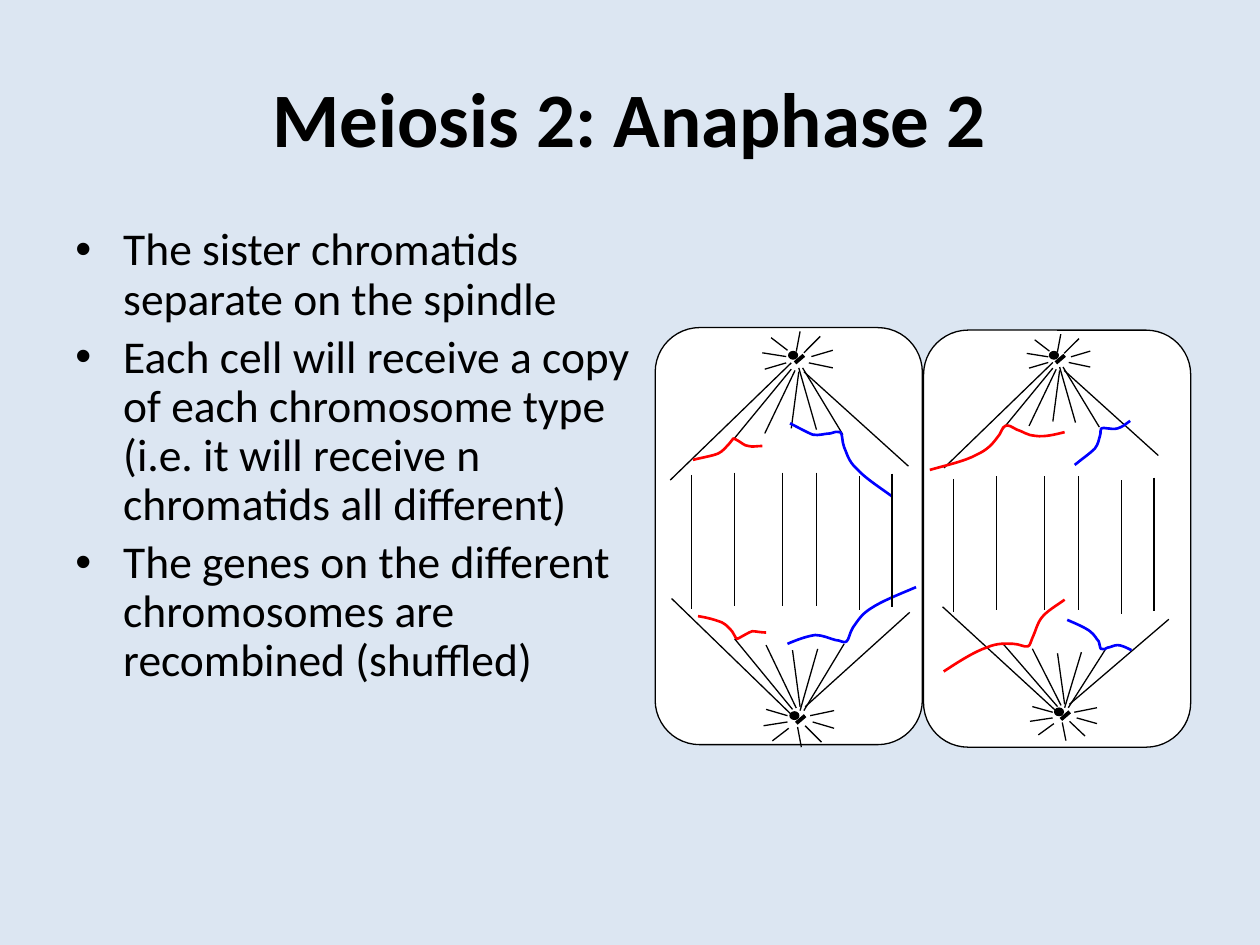
from lxml.etree import SubElement
from pptx import Presentation
from pptx.dml.color import RGBColor
from pptx.enum.shapes import MSO_CONNECTOR as Connector, MSO_SHAPE as Shape
from pptx.enum.text import MSO_ANCHOR as Anchor, PP_ALIGN as Align
from pptx.oxml.ns import qn
from pptx.util import Inches, Pt

BLACK = RGBColor(0, 0, 0)
WHITE = RGBColor(255, 255, 255)
RED = RGBColor(255, 0, 0)
BLUE = RGBColor(0, 0, 255)
BACKGROUND = RGBColor(0xDC, 0xE6, 0xF2)

TITLE = "Meiosis 2: Anaphase 2"
POINTS = [
    "The sister chromatids separate on the spindle",
    "Each cell will receive a copy of each chromosome type "
    "(i.e. it will receive n chromatids all different)",
    "The genes on the different chromosomes are recombined (shuffled)",
]

ASTER_LINES = [
    (0.04, 0.10, 0.87, 0.85), (0.03, 0.07, 0.35, 0.60), (0, 0.07, 0.14, 0.56),
    (0, 0.10, -0.06, 0.55), (-0.03, 0.09, -0.27, 0.59), (-0.06, 0.08, -0.52, 0.64),
    (-0.06, 0.03, -1.02, 0.96), (0.10, -0.02, 0.27, -0.07), (0.04, -0.05, 0.17, -0.18),
    (-0.02, -0.06, 0.01, -0.22), (-0.22, -0.17, -0.09, -0.07),
    (-0.10, -0.02, -0.29, -0.05), (0.08, 0.03, 0.27, 0.07), (-0.10, 0.03, -0.27, 0.08),
]
SPINDLE_TOPS = [(5.49, 3.77), (5.83, 3.75), (6.21, 3.75), (6.48, 3.75), (6.82, 3.78), (7.08, 3.76)]
SPINDLE_LENGTH = 1.06

LEFT_CELL = {
    "left": 5.2, "top": 2.6, "shift": (0, 0),
    "asters": [(6.34, 2.85, 1, 1), (6.35, 5.71, 1, -1)],
    "chromatids": [
        (BLUE, [(6.27, 3.36), (6.33, 3.39), (6.4, 3.43), (6.45, 3.45), (6.5, 3.46), (6.55, 3.44),
                (6.59, 3.44), (6.63, 3.43), (6.64, 3.42), (6.67, 3.43), (6.69, 3.45), (6.68, 3.5),
                (6.7, 3.55), (6.72, 3.59), (6.73, 3.66), (6.8, 3.72), (6.86, 3.79), (6.97, 3.86),
                (7.08, 3.94)]),
        (BLUE, [(6.25, 5.11), (6.32, 5.08), (6.4, 5.05), (6.47, 5.04), (6.53, 5.04), (6.59, 5.07),
                (6.63, 5.08), (6.67, 5.08), (6.7, 5.11), (6.72, 5.09), (6.74, 5.07), (6.74, 5.03),
                (6.77, 4.98), (6.8, 4.94), (6.83, 4.88), (6.91, 4.83), (7, 4.77), (7.13, 4.72),
                (7.27, 4.66)]),
        (RED, [(6.08, 5.02), (6.04, 5.02), (6, 5.01), (5.97, 5.01), (5.94, 5.02), (5.91, 5.04),
               (5.89, 5.05), (5.87, 5.06), (5.86, 5.07), (5.85, 5.07), (5.83, 5.06), (5.83, 5.03),
               (5.81, 5.01), (5.79, 4.99), (5.77, 4.96), (5.73, 4.94), (5.68, 4.92), (5.61, 4.9),
               (5.54, 4.89)]),
        (RED, [(6.05, 3.54), (6.01, 3.54), (5.97, 3.55), (5.94, 3.54), (5.91, 3.54), (5.88, 3.51),
               (5.86, 3.5), (5.84, 3.49), (5.83, 3.48), (5.82, 3.48), (5.81, 3.49), (5.8, 3.51),
               (5.78, 3.53), (5.76, 3.55), (5.74, 3.58), (5.7, 3.6), (5.65, 3.62), (5.58, 3.63),
               (5.5, 3.65)]),
    ],
}
RIGHT_CELL = {
    "left": 7.33, "top": 2.62, "shift": (2.08, 0.03),
    "asters": [(8.41, 2.85, 0.9, 0.9), (8.45, 5.68, 0.95, -0.9)],
    "chromatids": [
        (RED, [(8.45, 4.76), (8.38, 4.81), (8.31, 4.85), (8.27, 4.9), (8.23, 4.95), (8.22, 5.01),
               (8.2, 5.05), (8.18, 5.09), (8.18, 5.12), (8.16, 5.13), (8.13, 5.14), (8.09, 5.11),
               (8.04, 5.11), (7.99, 5.11), (7.92, 5.1), (7.83, 5.14), (7.74, 5.17), (7.61, 5.25),
               (7.49, 5.33)]),
        (RED, [(8.45, 3.43), (8.37, 3.45), (8.29, 3.47), (8.22, 3.46), (8.16, 3.46), (8.11, 3.42),
               (8.07, 3.41), (8.03, 3.39), (8.01, 3.37), (7.98, 3.38), (7.95, 3.39), (7.95, 3.44),
               (7.91, 3.48), (7.88, 3.52), (7.84, 3.57), (7.75, 3.61), (7.66, 3.66), (7.52, 3.69),
               (7.38, 3.73)]),
        (BLUE, [(8.98, 5.16), (8.94, 5.14), (8.9, 5.12), (8.87, 5.12), (8.84, 5.12), (8.81, 5.14),
                (8.79, 5.14), (8.77, 5.15), (8.76, 5.16), (8.74, 5.15), (8.73, 5.15), (8.73, 5.12),
                (8.72, 5.09), (8.7, 5.07), (8.69, 5.04), (8.65, 5.01), (8.61, 4.98), (8.54, 4.95),
                (8.47, 4.92)]),
        (BLUE, [(8.97, 3.34), (8.94, 3.36), (8.91, 3.39), (8.87, 3.4), (8.84, 3.41), (8.81, 3.4),
                (8.79, 3.4), (8.77, 3.4), (8.75, 3.39), (8.74, 3.4), (8.73, 3.41), (8.74, 3.43),
                (8.73, 3.46), (8.72, 3.49), (8.72, 3.52), (8.69, 3.56), (8.65, 3.6), (8.59, 3.64),
                (8.53, 3.69)]),
    ],
}


def write(para, text, size, bold=False, align=Align.LEFT, bullet=None, spacing=None, before=0):
    para.alignment = align
    para.space_before = Pt(before)
    if spacing:
        para.line_spacing = spacing
    if bullet:
        props = para._p.get_or_add_pPr()
        props.set("marL", str(Inches(0.38)))
        props.set("indent", str(-Inches(0.38)))
        SubElement(props, qn("a:buFont"), typeface="Arial")
        SubElement(props, qn("a:buChar"), char=bullet)
    span = para.add_run()
    span.text = text
    span.font.name = "Calibri"
    span.font.size = Pt(size)
    span.font.bold = bold
    span.font.color.rgb = BLACK


def bend(outline):
    segments = list(outline.iter(qn("a:lnTo")))
    track = segments[0].getparent()
    for first in range(0, len(segments), 3):
        curve = SubElement(track, qn("a:cubicBezTo"))
        for segment in segments[first:first + 3]:
            curve.append(segment[0])
            track.remove(segment)


class Sketch:
    def __init__(self, page):
        self.page = page
        self.shapes = page.shapes
        page.background.fill.solid()
        page.background.fill.fore_color.rgb = BACKGROUND

    def text_box(self, left, top, width, height, anchor=Anchor.TOP):
        box = self.shapes.add_textbox(Inches(left), Inches(top), Inches(width), Inches(height))
        box.text_frame.word_wrap = True
        box.text_frame.vertical_anchor = anchor
        return box.text_frame

    def shape(self, kind, left, top, width, height, color):
        shape = self.shapes.add_shape(kind, Inches(left), Inches(top), Inches(width), Inches(height))
        shape.shadow.inherit = False
        shape.fill.solid()
        shape.fill.fore_color.rgb = color
        shape.line.color.rgb = BLACK
        shape.line.width = Pt(0.75)

    def line(self, x1, y1, x2, y2, width=0.75):
        line = self.shapes.add_connector(
            Connector.STRAIGHT, Inches(x1), Inches(y1), Inches(x2), Inches(y2))
        line.line.color.rgb = BLACK
        line.line.width = Pt(width)
        SubElement(line._element.spPr, qn("a:effectLst"))

    def chromatid(self, color, nodes):
        start, *rest = [(Inches(x), Inches(y)) for x, y in nodes]
        builder = self.shapes.build_freeform(*start)
        builder.add_line_segments(rest, close=False)
        strand = builder.convert_to_shape()
        bend(strand._element)
        strand.shadow.inherit = False
        strand.fill.background()
        strand.line.color.rgb = color
        strand.line.width = Pt(1.5)

    def aster(self, x, y, across, down):
        for x1, y1, x2, y2 in ASTER_LINES:
            self.line(x + x1 * across, y + y1 * down, x + x2 * across, y + y2 * down)
        self.line(x + 0.04, y - 0.03, x - 0.03, y + 0.03, width=2.25)
        self.shape(Shape.OVAL, x - 0.08, y - 0.06, 0.07, 0.06, BLACK)

    def cell(self, left, top, shift, asters, chromatids):
        self.shape(Shape.ROUNDED_RECTANGLE, left, top, 2.12, 3.31, WHITE)
        for aster in asters:
            self.aster(*aster)
        for color, nodes in chromatids:
            self.chromatid(color, nodes)
        for x, y in SPINDLE_TOPS:
            x, y = x + shift[0], y + shift[1]
            self.line(x, y, x, y + SPINDLE_LENGTH)


def main():
    deck = Presentation()
    deck.slide_width, deck.slide_height = Inches(10), Inches(7.5)
    sketch = Sketch(deck.slides.add_slide(deck.slide_layouts[6]))

    title = sketch.text_box(0.5, 0.3, 9, 1.25, Anchor.MIDDLE)
    write(title.paragraphs[0], TITLE, 44, bold=True, align=Align.CENTER)

    body = sketch.text_box(0.5, 1.75, 4.7, 5.13)
    for index, point in enumerate(POINTS):
        para = body.add_paragraph() if index else body.paragraphs[0]
        write(para, point, 26, bullet="•", spacing=0.9, before=5.2 if index else 0)

    for cell in (LEFT_CELL, RIGHT_CELL):
        sketch.cell(**cell)
    deck.save("out.pptx")


if __name__ == "__main__":
    main()
